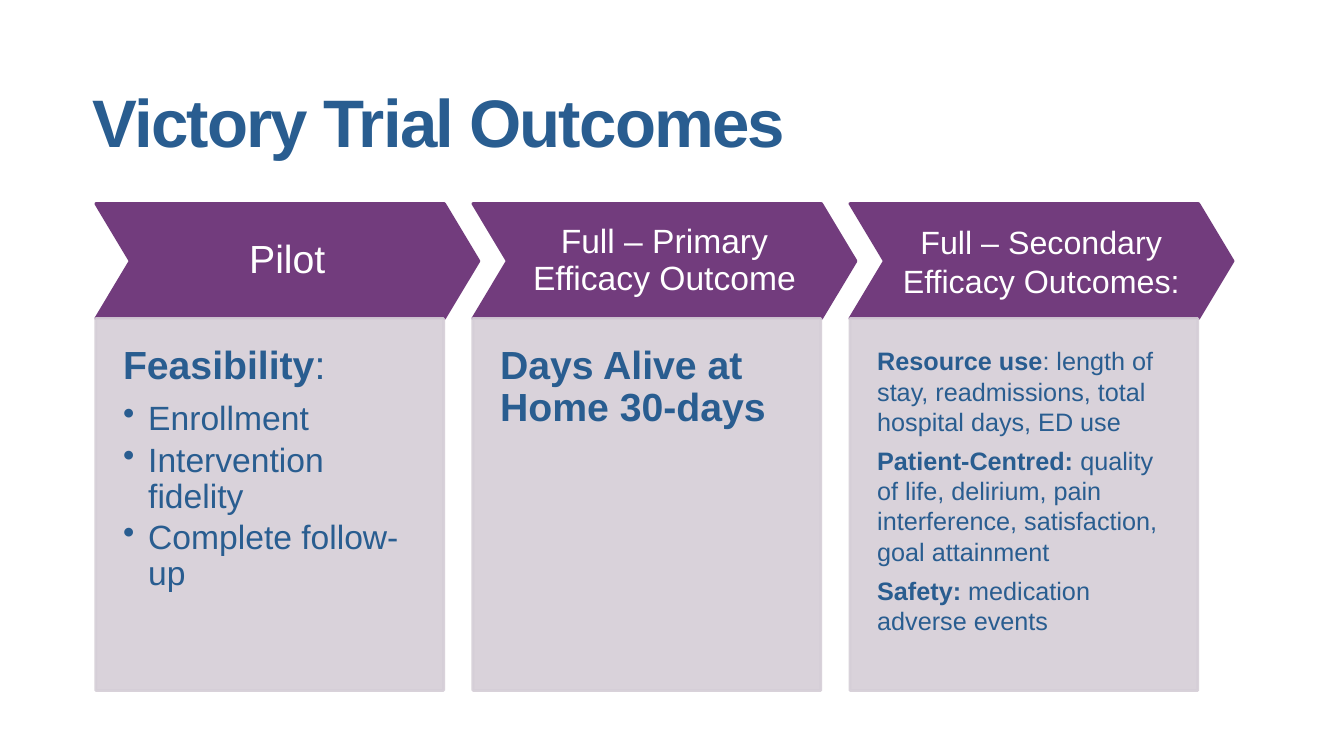
import pptx
import pptx.util
import pptx.dml.color
import pptx.enum.shapes
import pptx.enum.text
import pptx.oxml
import pptx.oxml.ns

Inches = pptx.util.Inches
Pt = pptx.util.Pt
RGBColor = pptx.dml.color.RGBColor
SHAPE = pptx.enum.shapes.MSO_SHAPE
ALIGN = pptx.enum.text.PP_ALIGN
ANCHOR = pptx.enum.text.MSO_ANCHOR
qn = pptx.oxml.ns.qn

BLUE = RGBColor(0x29, 0x5D, 0x90)
PURPLE = RGBColor(0x72, 0x3C, 0x7D)
MAUVE = RGBColor(0xD5, 0xCE, 0xD7)
WHITE = RGBColor(0xFF, 0xFF, 0xFF)

LEFT, TOP, PITCH = 0.95, 2.02, 3.74
HEAD_W, HEAD_H = 3.8, 1.14
BODY_W, BODY_H = 3.45, 3.69

# Each column: heading, heading size, body size, line spacing,
# lead paragraphs as (bold, plain), bullets
COLUMNS = [
    ("Pilot", 28, 28, 0.9, [("Feasibility", ":")],
     ["Enrollment", "Intervention fidelity", "Complete follow-up"]),
    ("Full – Primary Efficacy Outcome", 24, 28, 0.9,
     [("Days Alive at Home 30-days", "")], []),
    ("Full – Secondary Efficacy Outcomes:", 23, 18, 1.0,
     [("Resource use",
       ": length of stay, readmissions, total hospital days, ED use"),
      ("Patient-Centred: ", "quality of life, delirium, pain interference, "
       "satisfaction, goal attainment"),
      ("Safety: ", "medication adverse events")], []),
]


def style(par, size, color, space, after):
    par.font.name = "Arial"
    par.font.size = Pt(size)
    par.font.color.rgb = color
    par.line_spacing = space
    par.space_after = Pt(after)


def inset(frame, left, top, right, bottom):
    frame.margin_left = Inches(left)
    frame.margin_top = Inches(top)
    frame.margin_right = Inches(right)
    frame.margin_bottom = Inches(bottom)


def add_box(slide, kind, box, color):
    shape = slide.shapes.add_shape(kind, *map(Inches, box))
    shape.shadow.inherit = False
    shape.fill.solid()
    shape.fill.fore_color.rgb = color
    shape.line.color.rgb = color
    shape.line.width = Pt(2)
    shape.text_frame.word_wrap = True
    return shape


def fade(shape, percent):
    """Set the opacity of the shape's fill and line."""
    for tag in shape.element.spPr.iter(qn("a:srgbClr")):
        alpha = pptx.oxml.parse_xml(
            '<a:alpha %s val="%d"/>' % (pptx.oxml.ns.nsdecls("a"), percent * 1000))
        tag.append(alpha)


def add_bullet(par):
    props = par._p.get_or_add_pPr()
    props.set("marL", str(Inches(0.25)))
    props.set("indent", str(Inches(-0.25)))
    props.append(pptx.oxml.parse_xml(
        '<a:buChar %s char="•"/>' % pptx.oxml.ns.nsdecls("a")))


def add_title(slide, box):
    title = slide.shapes.title
    title.left, title.top, title.width, title.height = map(Inches, box)
    frame = title.text_frame
    frame.text = "Victory Trial Outcomes"
    frame.auto_size = pptx.enum.text.MSO_AUTO_SIZE.NONE
    frame.vertical_anchor = ANCHOR.BOTTOM
    inset(frame, 0, 0, 0, 0)
    par = frame.paragraphs[0]
    par.alignment = ALIGN.LEFT
    style(par, 48, BLUE, 1.0, 0)
    par.font.bold = True
    par.runs[0].font._element.set("spc", "-130")


def add_head(slide, box, text, size, space):
    shape = add_box(slide, SHAPE.CHEVRON, box, PURPLE)
    shape.adjustments[0] = 0.3
    frame = shape.text_frame
    frame.text = text
    frame.vertical_anchor = ANCHOR.MIDDLE
    inset(frame, 0.14, 0.14, 0.14, 0.14)
    par = frame.paragraphs[0]
    par.alignment = ALIGN.CENTER
    style(par, size, WHITE, space, 0)


def add_body(slide, box, size, space, leads, bullets):
    shape = add_box(slide, SHAPE.RECTANGLE, box, MAUVE)
    fade(shape, 90)
    frame = shape.text_frame
    frame.vertical_anchor = ANCHOR.TOP
    inset(frame, 0.27, 0.27, 0.27, 0.55)
    for i, (bold, plain) in enumerate(leads):
        par = frame.add_paragraph() if i else frame.paragraphs[0]
        par.alignment = ALIGN.LEFT
        run = par.add_run()
        run.text = bold
        run.font.bold = True
        if plain:
            par.add_run().text = plain
        style(par, size, BLUE, space, size * 0.35)
    for text in bullets:
        par = frame.add_paragraph()
        par.text = text
        par.level = 1
        par.alignment = ALIGN.LEFT
        add_bullet(par)
        style(par, 24, BLUE, space, 3.6)


def add_column(slide, left, top, column):
    head, head_size, size, space, leads, bullets = column
    add_head(slide, (left, top, HEAD_W, HEAD_H), head, head_size, space)
    add_body(slide, (left, top + HEAD_H, BODY_W, BODY_H),
             size, space, leads, bullets)


def main():
    deck = pptx.Presentation()
    deck.slide_width = Inches(13.33)
    deck.slide_height = Inches(7.5)
    slide = deck.slides.add_slide(deck.slide_layouts[5])
    add_title(slide, (0.92, 0.15, 11.26, 1.45))
    for i, column in enumerate(COLUMNS):
        add_column(slide, LEFT + i * PITCH, TOP, column)
    deck.save("out.pptx")


if __name__ == "__main__":
    main()
